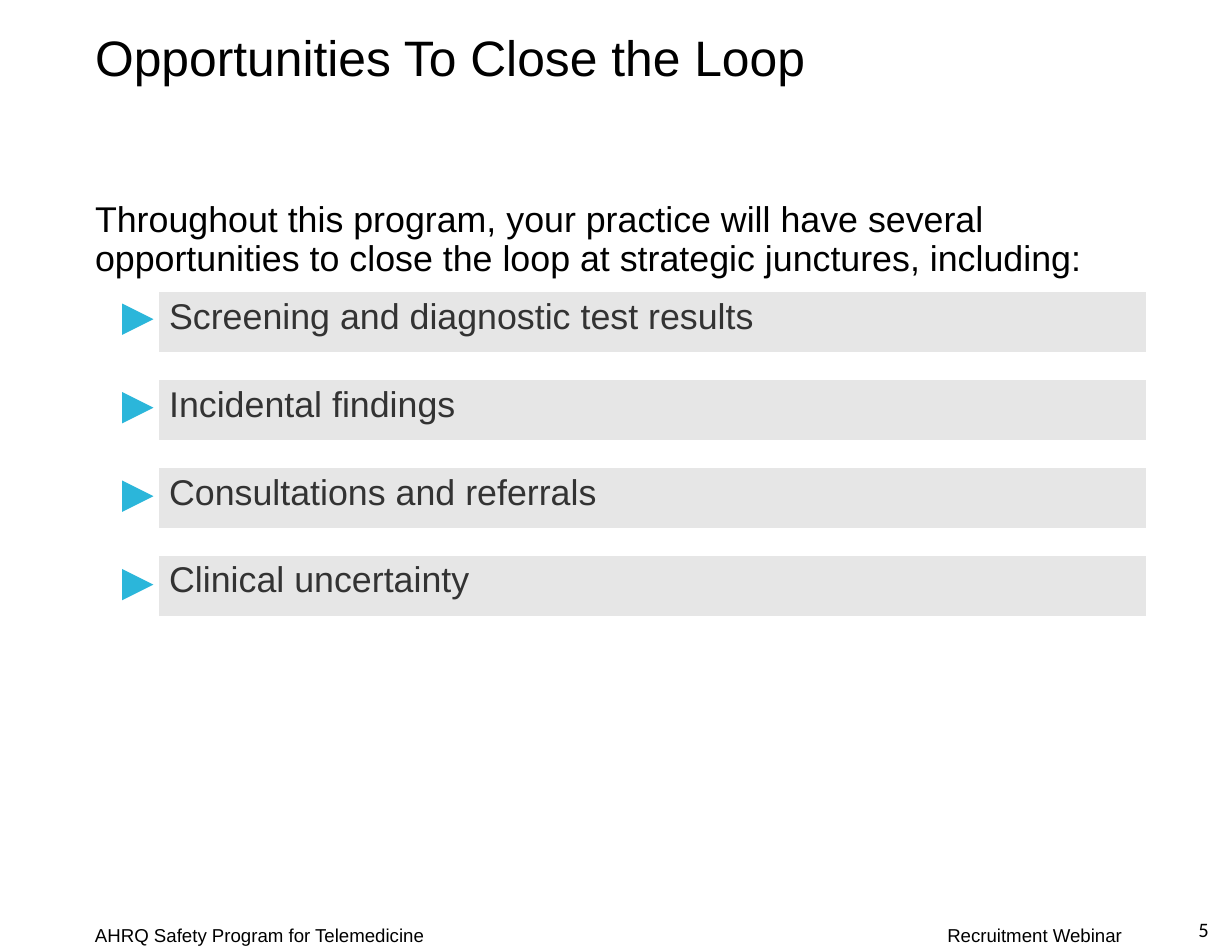
"""Build the "Opportunities To Close the Loop" slide."""
from lxml import etree
from pptx import Presentation
from pptx.dml.color import RGBColor
from pptx.enum import text
from pptx.oxml.ns import qn
from pptx.util import Inches, Pt

BLACK = RGBColor(0x00, 0x00, 0x00)
DARK = RGBColor(0x33, 0x33, 0x33)
GREY = RGBColor(0xE6, 0xE6, 0xE6)
BLUE = RGBColor(0x2B, 0xB6, 0xDA)

JUNCTURES = [
    "Screening and diagnostic test results",
    "Incidental findings",
    "Consultations and referrals",
    "Clinical uncertainty",
]
LEFT, WIDTH = 0.75, 9.49
TABLE_LEFT, TABLE_TOP, TABLE_WIDTH = 1.41, 2.6, 8.83
BAR, GAP = 0.55, 0.235
MARKER_LEFT, MARKER_TOP, MARKER_SIZE, MARKER_PITCH = 1.09, 2.71, 0.28, 0.79


def write(tf, content, size, font="Arial", color=BLACK, align=None, spacing=None):
    p = tf.paragraphs[0]
    p.alignment = align
    p.line_spacing = spacing
    r = p.add_run()
    r.text = content
    r.font.name = font
    r.font.size = Pt(size)
    r.font.color.rgb = color


def add_text(s, box, content, size, anchor=text.MSO_ANCHOR.TOP, **fmt):
    tf = s.shapes.add_textbox(*map(Inches, box)).text_frame
    tf.word_wrap = True
    tf.vertical_anchor = anchor
    write(tf, content, size, **fmt)


def add_marker(s, left, top, size):
    fb = s.shapes.build_freeform(Inches(left), Inches(top))
    fb.add_line_segments([
        (Inches(left + size), Inches(top + size / 2)),
        (Inches(left), Inches(top + size)),
    ], close=True)
    sp = fb.convert_to_shape()
    sp.shadow.inherit = False
    sp.fill.solid()
    sp.fill.fore_color.rgb = BLUE
    sp.line.fill.background()


def make_spacer(cell):
    cell.fill.background()
    cell.margin_top = cell.margin_bottom = 0
    p = cell.text_frame.paragraphs[0]
    etree.SubElement(p._p, qn("a:endParaRPr"), sz="800")


def set_borders(cell):
    tcPr = cell._tc.get_or_add_tcPr()
    for i, side in enumerate(("lnL", "lnR", "lnT", "lnB")):
        ln = etree.Element(qn(f"a:{side}"), w=str(Pt(1)))
        fill = etree.SubElement(ln, qn("a:solidFill"))
        etree.SubElement(fill, qn("a:srgbClr"), val="FFFFFF")
        tcPr.insert(i, ln)


def add_bars(s, items):
    count = 2 * len(items) - 1
    height = len(items) * BAR + (len(items) - 1) * GAP
    box = map(Inches, (TABLE_LEFT, TABLE_TOP, TABLE_WIDTH, height))
    table = s.shapes.add_table(count, 1, *box).table
    table.first_row = table.horz_banding = False
    for i, row in enumerate(table.rows):
        cell = row.cells[0]
        if i % 2:
            row.height = Inches(GAP)
            make_spacer(cell)
        else:
            row.height = Inches(BAR)
            cell.fill.solid()
            cell.fill.fore_color.rgb = GREY
            write(cell.text_frame, items[i // 2], 23, color=DARK)
        set_borders(cell)


def main():
    prs = Presentation()
    prs.slide_width, prs.slide_height = Inches(11), Inches(8.5)
    s = prs.slides.add_slide(prs.slide_layouts[6])
    middle = text.MSO_ANCHOR.MIDDLE
    add_text(s, (LEFT, 0, WIDTH, 1.08), "Opportunities To Close the Loop", 32,
             anchor=middle, spacing=0.9)
    add_text(s, (LEFT, 1.75, WIDTH, 0.85),
             "Throughout this program, your practice will have several "
             "opportunities to close the loop at strategic junctures, including:",
             23, spacing=0.9)
    add_bars(s, JUNCTURES)
    for i in range(len(JUNCTURES)):
        add_marker(s, MARKER_LEFT, MARKER_TOP + i * MARKER_PITCH, MARKER_SIZE)
    add_text(s, (LEFT, 8.2, 4.16, 0.3), "AHRQ Safety Program for Telemedicine", 12)
    add_text(s, (8.36, 8.2, 1.9, 0.3), "Recruitment Webinar", 12)
    add_text(s, (10.25, 8.12, 0.64, 0.36), "5", 13.2, anchor=middle,
             font="Calibri", align=text.PP_ALIGN.RIGHT)
    prs.save("out.pptx")


if __name__ == "__main__":
    main()
